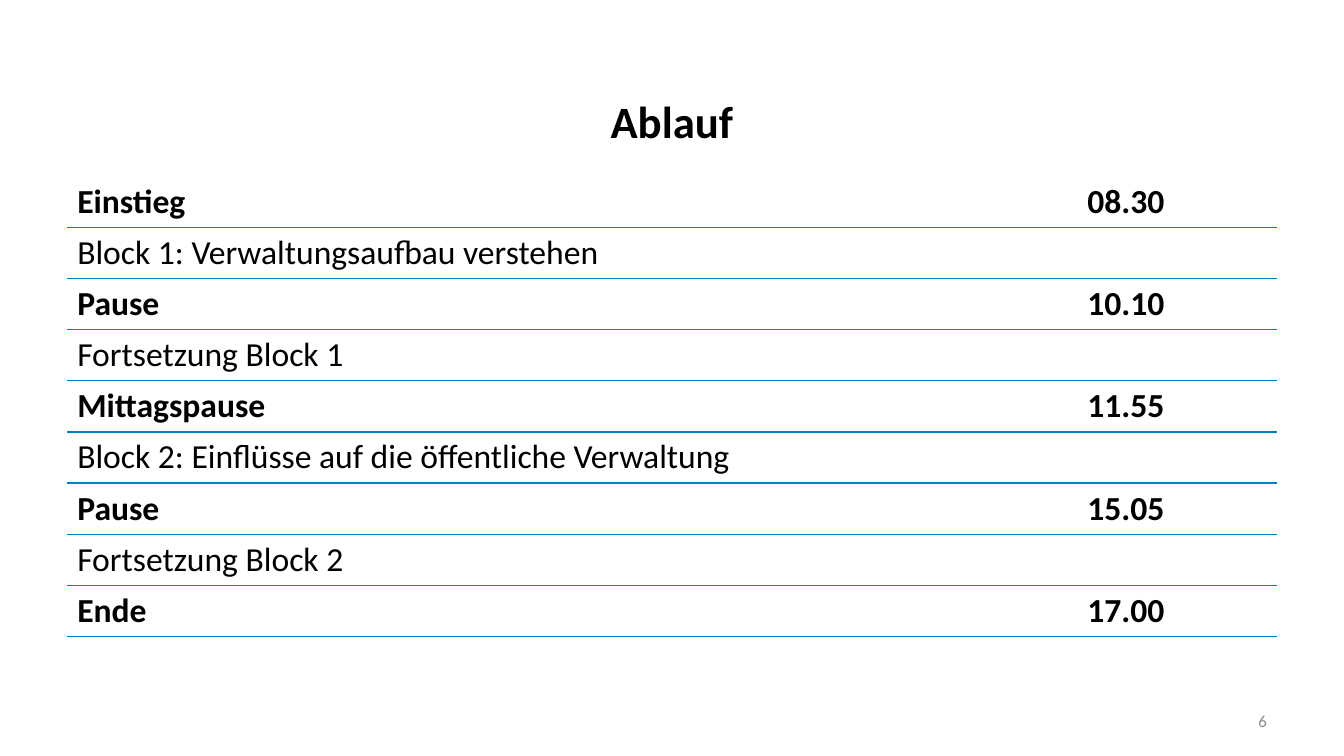
from lxml import etree
from pptx import Presentation
from pptx import util as u
from pptx.dml.color import RGBColor
from pptx.enum import text
from pptx.oxml import ns

PX = 9525
BLACK = RGBColor(0x00, 0x00, 0x00)
GREY = RGBColor(0x8C, 0x8C, 0x8C)
BLUE = RGBColor(0x00, 0x82, 0xCA)

AGENDA = [
    ("Einstieg", "08.30"),
    ("Block 1: Verwaltungsaufbau verstehen", ""),
    ("Pause", "10.10"),
    ("Fortsetzung Block 1", ""),
    ("Mittagspause", "11.55"),
    ("Block 2: Einflüsse auf die öffentliche Verwaltung", ""),
    ("Pause", "15.05"),
    ("Fortsetzung Block 2", ""),
    ("Ende", "17.00"),
]
ROW_HEIGHT = 48
COLUMN_WIDTHS = (962, 190)


def write(frame, wording, size, color, bold, align):
    frame.word_wrap = True
    frame.vertical_anchor = text.MSO_ANCHOR.MIDDLE
    line = frame.paragraphs[0]
    line.text = wording
    line.alignment = align
    for holder in (line, *line.runs):
        for key, value in {"name": "Calibri", "size": u.Pt(size), "bold": bold}.items():
            setattr(holder.font, key, value)
        holder.font.color.rgb = color


def add_border(cell, position, side, color):
    border = etree.Element(ns.qn(f"a:{side}"), w=str(u.Pt(1)))
    if color is None:
        etree.SubElement(border, ns.qn("a:noFill"))
    else:
        fill = etree.SubElement(border, ns.qn("a:solidFill"))
        etree.SubElement(fill, ns.qn("a:srgbClr"), val=str(color))
    cell._tc.get_or_add_tcPr().insert(position, border)


prs = Presentation()
prs.slide_width, prs.slide_height = 1280 * PX, 720 * PX
slide = prs.slides.add_slide(prs.slide_layouts[5])

title = slide.shapes.title
for key, value in {"left": 64, "top": 81, "width": 1152, "height": 68}.items():
    setattr(title, key, value * PX)
write(title.text_frame, "Ablauf", 32, BLACK, True, text.PP_ALIGN.CENTER)

schedule = slide.shapes.add_table(
    len(AGENDA), len(COLUMN_WIDTHS), 64 * PX, 168 * PX,
    sum(COLUMN_WIDTHS) * PX, len(AGENDA) * ROW_HEIGHT * PX,
).table
schedule.first_row = schedule.horz_banding = False
for column, width in zip(schedule.columns, COLUMN_WIDTHS):
    column.width = width * PX

for row, entry in enumerate(AGENDA):
    for col, wording in enumerate(entry):
        cell = schedule.cell(row, col)
        write(cell.text_frame, wording, 24, BLACK, bool(entry[1]), text.PP_ALIGN.LEFT)
        cell.fill.background()
        edges = {"lnL": None, "lnR": None, "lnT": BLUE if row else None, "lnB": BLUE}
        for position, (side, color) in enumerate(edges.items()):
            add_border(cell, position, side, color)

page_number = slide.shapes.add_textbox(918 * PX, 667 * PX, 298 * PX, 38 * PX)
write(page_number.text_frame, "6", 12, GREY, False, text.PP_ALIGN.RIGHT)

prs.save("out.pptx")
